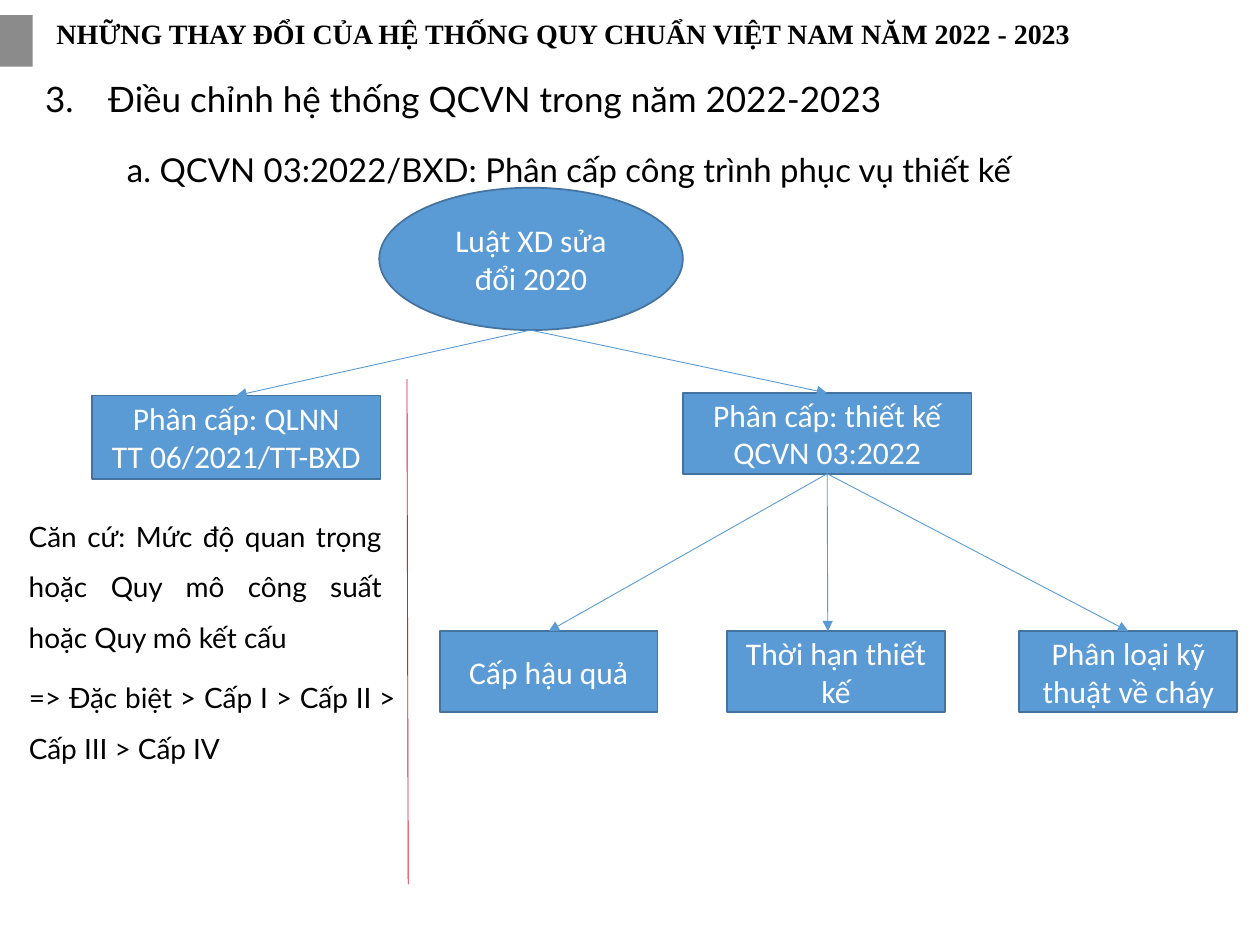
from lxml.etree import SubElement
from pptx import Presentation
from pptx.dml.color import RGBColor
from pptx.enum.shapes import MSO_CONNECTOR as CONN, MSO_SHAPE as SHAPE
from pptx.enum.text import MSO_ANCHOR as ANCHOR, PP_ALIGN as ALIGN
from pptx.oxml.ns import qn
from pptx.util import Inches, Pt

COLORS = {
    "black": "000000",
    "white": "FFFFFF",
    "gray": "808080",
    "blue": "5B9BD5",
    "edge": "43739E",
    "red": "DC1F34",
}
RGB = {name: RGBColor.from_string(value) for name, value in COLORS.items()}


def write(sp, text, size=18, font="Calibri", color="white", bold=False,
          align=ALIGN.CENTER, anchor=ANCHOR.MIDDLE, spacing=None, number=None):
    tf = sp.text_frame
    tf.word_wrap = True
    tf.vertical_anchor = anchor
    for i, line in enumerate(text.split("\n")):
        p = tf.paragraphs[0] if i == 0 else tf.add_paragraph()
        p.alignment = align
        if spacing:
            p.line_spacing = spacing
        if number:
            pPr = p._p.get_or_add_pPr()
            pPr.set("marL", str(Inches(0.5)))
            pPr.set("indent", str(Inches(-0.5)))
            SubElement(pPr, qn("a:buFont"), typeface="+mj-lt")
            SubElement(pPr, qn("a:buAutoNum"), type="arabicPeriod", startAt=str(number))
        r = p.add_run()
        r.text = line
        r.font.size = Pt(size)
        r.font.name = font
        r.font.bold = bold
        r.font.color.rgb = RGB[color]


def connect(x1, y1, x2, y2, color="blue", start=None, end=None, arrow=True):
    cx = s.shapes.add_connector(CONN.STRAIGHT, Inches(x1), Inches(y1), Inches(x2), Inches(y2))
    cx.line.color.rgb = RGB[color]
    cx.line.width = Pt(0.5)
    if arrow:
        SubElement(cx.line._get_or_add_ln(), qn("a:tailEnd"), type="triangle")
    SubElement(cx._element.spPr, qn("a:effectLst"))
    if start:
        cx.begin_connect(start, 2)
    if end:
        cx.end_connect(end, 0)


prs = Presentation()
prs.slide_width, prs.slide_height = Inches(10), Inches(7.5)
s = prs.slides.add_slide(prs.slide_layouts[6])

marker = s.shapes.add_shape(SHAPE.RECTANGLE, 0, Inches(0.12), Inches(0.26), Inches(0.41))
marker.shadow.inherit = False
marker.fill.solid()
marker.fill.fore_color.rgb = RGB["gray"]
SubElement(marker.fill._xPr.find(qn("a:solidFill"))[0], qn("a:alpha"), val="91000")
marker.line.fill.background()

lato = dict(font="Lato", color="black", anchor=ANCHOR.TOP)
body = dict(lato, size=16, align=ALIGN.JUSTIFY, spacing=1.5)
texts = [
    (0.26, 0.6, 8.69, 0.35, "Điều chỉnh hệ thống QCVN trong năm 2022-2023",
     dict(lato, size=20, align=ALIGN.LEFT, spacing=0.9, number=3)),
    (0.35, 0.11, 8.94, 0.42, "NHỮNG THAY ĐỔI CỦA HỆ THỐNG QUY CHUẨN VIỆT NAM NĂM 2022 - 2023",
     dict(lato, font="Times New Roman", size=16, bold=True, align=ALIGN.LEFT, spacing=0.9)),
    (0.91, 0.98, 7.4, 0.63, "a. QCVN 03:2022/BXD: Phân cấp công trình phục vụ thiết kế",
     dict(lato, size=18.8, align=ALIGN.LEFT, spacing=1.5)),
    (0.13, 3.94, 3, 1.33, "Căn cứ: Mức độ quan trọng hoặc Quy mô công suất hoặc Quy mô kết cấu", body),
    (0.13, 5.22, 3.11, 0.91, "=> Đặc biệt > Cấp I > Cấp II > Cấp III > Cấp IV", body),
]
for x, y, w, h, text, style in texts:
    write(s.shapes.add_textbox(Inches(x), Inches(y), Inches(w), Inches(h)), text, **style)

nodes = {
    "law": (SHAPE.OVAL, 3.01, 1.49, 2.41, 1.13, "Luật XD sửa đổi 2020"),
    "management": (SHAPE.RECTANGLE, 0.73, 3.14, 2.29, 0.66, "Phân cấp: QLNN\nTT 06/2021/TT-BXD"),
    "design": (SHAPE.RECTANGLE, 5.42, 3.12, 2.29, 0.64, "Phân cấp: thiết kế\nQCVN 03:2022"),
    "consequence": (SHAPE.RECTANGLE, 3.49, 5.01, 1.73, 0.64, "Cấp hậu quả"),
    "lifetime": (SHAPE.RECTANGLE, 5.77, 5.01, 1.73, 0.64, "Thời hạn thiết kế"),
    "fire": (SHAPE.RECTANGLE, 8.09, 5.01, 1.73, 0.64, "Phân loại kỹ thuật về cháy"),
}
boxes = {}
for name, (kind, x, y, w, h, text) in nodes.items():
    sp = s.shapes.add_shape(kind, Inches(x), Inches(y), Inches(w), Inches(h))
    sp.shadow.inherit = False
    sp.fill.solid()
    sp.fill.fore_color.rgb = RGB["blue"]
    sp.line.color.rgb = RGB["edge"]
    sp.line.width = Pt(1)
    write(sp, text)
    boxes[name] = sp

connect(4.21, 2.62, 6.57, 3.12, end=boxes["design"])
connect(4.21, 2.62, 1.88, 3.14, end=boxes["management"])
connect(6.57, 3.76, 8.95, 5.01, start=boxes["design"], end=boxes["fire"])
connect(6.57, 3.76, 6.57, 5.01, start=boxes["design"])
connect(6.57, 3.76, 4.36, 5.01, start=boxes["design"], end=boxes["consequence"])
connect(3.23, 3.01, 3.24, 7.02, color="red", arrow=False)

prs.save("out.pptx")
